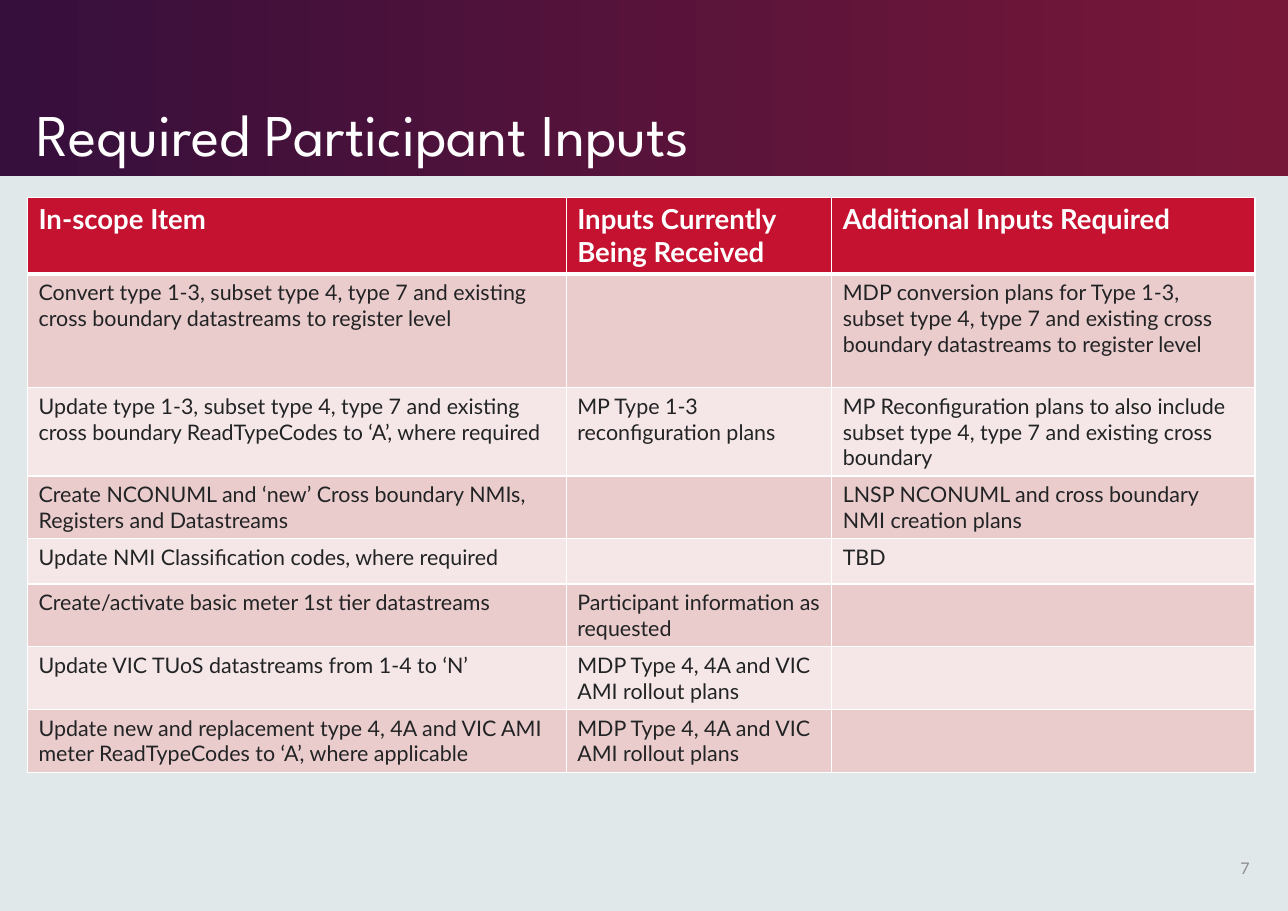
"""Build the Required Participant Inputs slide."""
import pptx
import pptx.util
import pptx.dml.color
import pptx.enum.shapes
import pptx.enum.text
import pptx.oxml
import pptx.oxml.ns

Inches, Pt = pptx.util.Inches, pptx.util.Pt
RGBColor = pptx.dml.color.RGBColor
ALIGN, ANCHOR = pptx.enum.text.PP_ALIGN, pptx.enum.text.MSO_ANCHOR

WHITE = RGBColor(0xFF, 0xFF, 0xFF)
PALE = RGBColor(0xE0, 0xE8, 0xEA)
PLUM = RGBColor(0x36, 0x0F, 0x3C)
WINE = RGBColor(0x77, 0x17, 0x38)
RED = RGBColor(0xC4, 0x12, 0x30)
ROSE = RGBColor(0xEA, 0xCC, 0xCD)
BLUSH = RGBColor(0xF5, 0xE7, 0xE8)
INK = RGBColor(0x22, 0x23, 0x24)
GREY = RGBColor(0x8D, 0x8D, 0x8E)

FORMATS = {
    "title": {"name": "League Spartan", "size": Pt(38.6), "color": WHITE},
    "number": {"name": "Lato", "size": Pt(10.5), "color": GREY},
    "head": {"name": "Lato", "size": Pt(18), "bold": True, "color": WHITE},
    "body": {"name": "Lato", "size": Pt(14), "bold": False, "color": INK},
}
ROLLOUT = "MDP Type 4, 4A and VIC AMI rollout plans"
ROWS = [
    (0.7, "In-scope Item", "Inputs Currently Being Received", "Additional Inputs Required"),
    (1.03, "Convert type 1-3, subset type 4, type 7 and existing cross boundary datastreams to register level", "",
     "MDP conversion plans for Type 1-3, subset type 4, type 7 and existing cross boundary datastreams to register level"),
    (0.8, "Update type 1-3, subset type 4, type 7 and existing cross boundary ReadTypeCodes to ‘A’, where required",
     "MP Type 1-3 reconfiguration plans",
     "MP Reconfiguration plans to also include subset type 4, type 7 and existing cross boundary"),
    (0.57, "Create NCONUML and ‘new’ Cross boundary NMIs, Registers and Datastreams", "",
     "LNSP NCONUML and cross boundary NMI creation plans"),
    (0.41, "Update NMI Classification codes, where required", "", "TBD"),
    (0.57, "Create/activate basic meter 1st tier datastreams", "Participant information as requested", ""),
    (0.57, "Update VIC TUoS datastreams from 1-4 to ‘N’", ROLLOUT, ""),
    (0.57, "Update new and replacement type 4, 4A and VIC AMI meter ReadTypeCodes to ‘A’, where applicable", ROLLOUT, ""),
]
COLS = [4.89, 2.41, 3.84]


def write(frame, text, kind):
    frame.text = text
    font = frame.paragraphs[0].font
    for key, value in FORMATS[kind].items():
        if key == "color":
            font.color.rgb = value
        else:
            setattr(font, key, value)


def border(cell, widths):
    props = cell._tc.get_or_add_tcPr()
    for spot, (side, width) in enumerate(widths.items()):
        props.insert(spot, pptx.oxml.parse_xml(
            f'<a:ln{side} {pptx.oxml.ns.nsdecls("a")} w="{Pt(width)}">'
            f'<a:solidFill><a:srgbClr val="{WHITE}"/></a:solidFill></a:ln{side}>'))


deck = pptx.Presentation()
deck.slide_width, deck.slide_height = Inches(11.69), Inches(8.27)
slide = deck.slides.add_slide(deck.slide_layouts[5])
slide.background.fill.solid()
slide.background.fill.fore_color.rgb = PALE

band = slide.shapes.add_shape(
    pptx.enum.shapes.MSO_SHAPE.RECTANGLE, 0, 0, deck.slide_width, Inches(1.6))
band.shadow.inherit = False
band.line.fill.background()
band.fill.gradient()
band.fill.gradient_angle = 0
for stop, color, place in zip(band.fill.gradient_stops, (PLUM, WINE), (0, 0.99)):
    stop.color.rgb = color
    stop.position = place
slide.shapes._spTree.insert(2, band._element)

title = slide.shapes.title
title.left, title.top, title.width, title.height = map(Inches, (0.23, 0.16, 9.89, 1.43))
write(title.text_frame, "Required Participant Inputs", "title")
title.text_frame.auto_size = pptx.enum.text.MSO_AUTO_SIZE.NONE
title.text_frame.vertical_anchor = ANCHOR.BOTTOM
title.text_frame.paragraphs[0].alignment = ALIGN.LEFT
title.text_frame.paragraphs[0].line_spacing = 0.9

number = slide.shapes.add_textbox(*map(Inches, (10.89, 7.66, 0.55, 0.44))).text_frame
number.word_wrap = True
number.vertical_anchor = ANCHOR.MIDDLE
write(number, "7", "number")
number.paragraphs[0].alignment = ALIGN.RIGHT

height = sum(row[0] for row in ROWS)
table = slide.shapes.add_table(
    len(ROWS), len(COLS), *map(Inches, (0.25, 1.79, sum(COLS), height))).table
for col, width in zip(table.columns, COLS):
    col.width = Inches(width)
for r, (tall, *texts) in enumerate(ROWS):
    table.rows[r].height = Inches(tall)
    for c, text in enumerate(texts):
        cell = table.cell(r, c)
        write(cell.text_frame, text, "body" if r else "head")
        cell.fill.solid()
        cell.fill.fore_color.rgb = (ROSE if r % 2 else BLUSH) if r else RED
        border(cell, {"L": 1, "R": 1, "T": 3 if r == 1 else 1, "B": 1 if r else 3})

deck.save("out.pptx")
